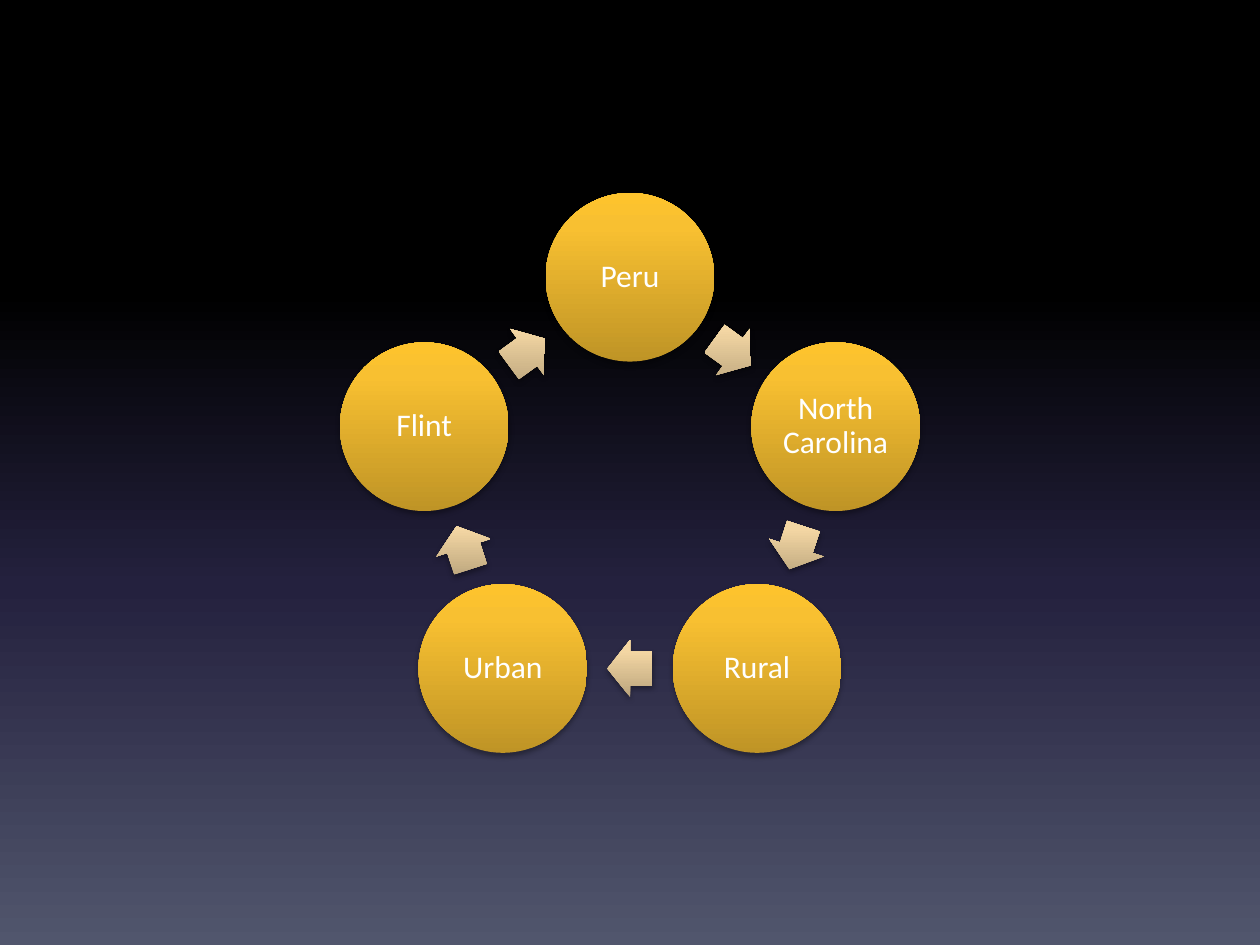
import math

import pptx
import pptx.enum.shapes
import pptx.enum.text
import pptx.oxml
import pptx.oxml.ns
import pptx.util
from pptx.dml.color import RGBColor
from pptx.util import Cm

COLORS = {
    "black": "000000",
    "night": "24213E",
    "slate": "51566D",
    "gold_dark": "BF9426",
    "gold": "F8C031",
    "gold_light": "FDC32D",
    "sand_dark": "BBA57D",
    "sand": "F3D6A3",
    "sand_light": "F6D7A2",
    "white": "FFFFFF",
}
SKY = [(0, "black"), (31, "black"), (62, "night"), (100, "slate")]
GOLD = [(0, "gold_dark"), (80, "gold"), (100, "gold_light")]
SAND = [(0, "sand_dark"), (80, "sand"), (100, "sand_light")]
PLACES = ["Peru", "North Carolina", "Rural", "Urban", "Flint"]
CIRCLE = 3.4
ARROW_WIDTH, ARROW_HEIGHT = 0.91, 1.15


def paint_gradient(fill, element, stops, angle):
    """Give the element a linear gradient that stays upright when it turns."""
    fill.solid()
    solid = element.find(".//" + pptx.oxml.ns.qn("a:solidFill"))
    marks = "".join(
        f'<a:gs pos="{place * 1000}"><a:srgbClr val="{COLORS[name]}"/></a:gs>'
        for place, name in stops
    )
    gradient = pptx.oxml.parse_xml(
        f'<a:gradFill {pptx.oxml.ns.nsdecls("a")} rotWithShape="0">'
        f'<a:gsLst>{marks}</a:gsLst><a:lin ang="{angle * 60000}" scaled="0"/></a:gradFill>'
    )
    solid.getparent().replace(solid, gradient)


def add_soft_shadow(shape):
    """Add a faint shadow just below the shape."""
    shape.shadow.inherit = False
    effects = shape._element.spPr.find(pptx.oxml.ns.qn("a:effectLst"))
    effects.append(pptx.oxml.parse_xml(
        f'<a:outerShdw {pptx.oxml.ns.nsdecls("a")} blurRad="40000" dist="23000" '
        f'dir="5400000" rotWithShape="0"><a:srgbClr val="{COLORS["black"]}">'
        '<a:alpha val="35000"/></a:srgbClr></a:outerShdw>'
    ))


def add_centred_shape(page, kind, centre, size, stops):
    """Add a shaded shape around a centre, both given in centimetres."""
    (x, y), (width, height) = centre, size
    shape = page.shapes.add_shape(
        kind, Cm(x - width / 2), Cm(y - height / 2), Cm(width), Cm(height)
    )
    shape.line.fill.background()
    paint_gradient(shape.fill, shape._element, stops, 270)
    add_soft_shadow(shape)
    return shape


def write_text(shape, text, size=18, font="Calibri", color="white"):
    """Write one centred paragraph in the shape."""
    frame = shape.text_frame
    frame.word_wrap = True
    frame.vertical_anchor = pptx.enum.text.MSO_ANCHOR.MIDDLE
    frame.margin_left = frame.margin_right = Cm(0.08)
    frame.margin_top = frame.margin_bottom = Cm(0.08)
    para = frame.paragraphs[0]
    para.alignment = pptx.enum.text.PP_ALIGN.CENTER
    para.line_spacing = 0.9
    span = para.add_run()
    span.text = text
    span.font.size = pptx.util.Pt(size)
    span.font.name = font
    span.font.color.rgb = RGBColor.from_string(COLORS[color])


def add_cycle(page, box, labels):
    """Place labelled circles clockwise round a square box with arrows between."""
    left, top, side = box
    radius = (side - CIRCLE) / 2
    step = 360 / len(labels)
    shapes = pptx.enum.shapes.MSO_SHAPE

    def point(distance, degrees):
        """Return the point at a clockwise angle from the top of the ring."""
        turn = math.radians(degrees)
        return (left + side / 2 + distance * math.sin(turn),
                top + side / 2 - distance * math.cos(turn))

    for index, label in enumerate(labels):
        angle = index * step
        circle = add_centred_shape(
            page, shapes.OVAL, point(radius, angle), (CIRCLE, CIRCLE), GOLD
        )
        write_text(circle, label)
        between = angle + step / 2
        chord = radius * math.cos(math.radians(step / 2))
        arrow = add_centred_shape(
            page, shapes.RIGHT_ARROW, point(chord, between),
            (ARROW_WIDTH, ARROW_HEIGHT), SAND
        )
        arrow.adjustments[0] = 0.6
        arrow.adjustments[1] = 0.5
        arrow.rotation = between


def main():
    """Build the slide and save it."""
    deck = pptx.Presentation()
    deck.slide_width, deck.slide_height = Cm(25.4), Cm(19.05)
    page = deck.slides.add_slide(deck.slide_layouts[6])
    paint_gradient(page.background.fill, page._element, SKY, 90)
    add_cycle(page, (6.64, 3.89, 12.12), PLACES)
    deck.save("out.pptx")


if __name__ == "__main__":
    main()
